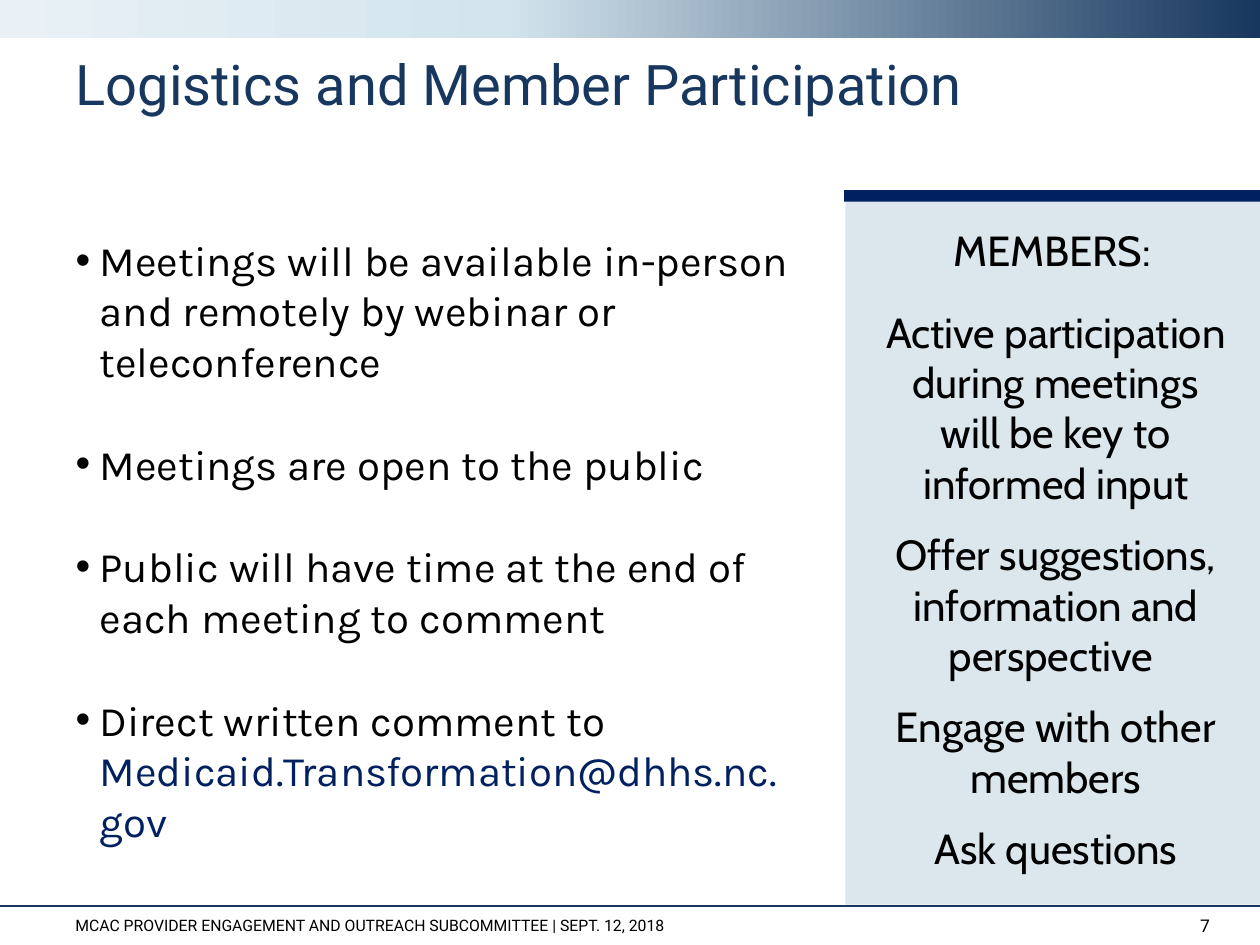
import copy

import pptx
import pptx.dml.color
import pptx.enum.shapes
import pptx.enum.text
import pptx.oxml
import pptx.util

Inches = pptx.util.Inches
Pt = pptx.util.Pt
ALIGN = pptx.enum.text.PP_ALIGN
ANCHOR = pptx.enum.text.MSO_ANCHOR
RECTANGLE = pptx.enum.shapes.MSO_SHAPE.RECTANGLE


def color(value):
    return pptx.dml.color.RGBColor.from_string(value)


def write(paragraph, text, font, paragraph_format):
    paragraph.text = text
    for name, value in paragraph_format.items():
        setattr(paragraph, name, value)
    for run in paragraph.runs:
        run.font.color.rgb = color("000000")
        for name, value in font.items():
            setattr(run.font, name, value)


presentation = pptx.Presentation()
presentation.slide_width = Inches(10)
presentation.slide_height = Inches(7.5)
slide = presentation.slides.add_slide(presentation.slide_layouts[1])

footer_line = slide.shapes.add_connector(
    pptx.enum.shapes.MSO_CONNECTOR.STRAIGHT,
    Inches(0), Inches(7.19), Inches(10), Inches(7.19),
)
footer_line.line.color.rgb = color("17375E")
footer_line.line.width = Pt(1)
footer_line.element.spPr.append(
    pptx.oxml.parse_xml(
        '<a:effectLst xmlns:a="http://schemas.openxmlformats.org/drawingml/2006/main"/>'
    )
)

rectangles = []
for left, top, width, height, fill in [
    (0, 0, 10, 0.3, "17375E"),
    (6.71, 1.56, 3.29, 5.62, "DBE7EC"),
    (6.7, 1.51, 3.3, 0.09, "002060"),
]:
    shape = slide.shapes.add_shape(
        RECTANGLE, Inches(left), Inches(top), Inches(width), Inches(height)
    )
    shape.shadow.inherit = False
    shape.fill.solid()
    shape.fill.fore_color.rgb = color(fill)
    shape.line.fill.background()
    rectangles.append(shape)

top_band = rectangles[0]
top_band.fill.gradient()
top_band.fill.gradient_angle = 180
stop_list = top_band.element.xpath(".//a:gsLst")[0]
stop_list.insert(1, copy.deepcopy(stop_list[0]))
gradient = [(0, "17375E"), (0.6, "D3E4ED"), (1, "E9F1F6")]
for stop, (position, value) in zip(top_band.fill.gradient_stops, gradient):
    stop.position = position
    stop.color.rgb = color(value)

title = slide.shapes.title
body = slide.placeholders[1]
footer, number, members = [
    slide.shapes.add_textbox(0, 0, Inches(1), Inches(1)) for _ in range(3)
]
for shape, left, top, width, height, anchor in [
    (title, 0.5, 0.4, 9, 0.6, ANCHOR.TOP),
    (body, 0.5, 1.81, 5.91, 4.77, ANCHOR.TOP),
    (footer, 0.5, 7.19, 8.47, 0.31, ANCHOR.MIDDLE),
    (number, 9.08, 7.19, 0.62, 0.31, ANCHOR.MIDDLE),
    (members, 6.85, 1.73, 3, 5.3, ANCHOR.TOP),
]:
    shape.left, shape.top = Inches(left), Inches(top)
    shape.width, shape.height = Inches(width), Inches(height)
    shape.text_frame.word_wrap = True
    shape.text_frame.auto_size = pptx.enum.text.MSO_AUTO_SIZE.NONE
    shape.text_frame.vertical_anchor = anchor

for shape, text, font, paragraph_format in [
    (title, "Logistics and Member Participation",
     {"name": "Roboto", "size": Pt(32)},
     {"alignment": ALIGN.LEFT, "line_spacing": 0.9}),
    (footer, "MCAC PROVIDER ENGAGEMENT AND OUTREACH SUBCOMMITTEE | SEPT. 12, 2018",
     {"name": "Roboto", "size": Pt(9)}, {}),
    (number, "7", {"name": "Roboto", "size": Pt(10)}, {"alignment": ALIGN.RIGHT}),
]:
    write(shape.text_frame.paragraphs[0], text, font, paragraph_format)
title.text_frame.paragraphs[0].runs[0].font.color.rgb = color("17375E")

body_font = {"name": "Karla", "size": Pt(24)}
for index, (text, space_after) in enumerate([
    ("Meetings will be available in-person and remotely by webinar or teleconference", 18),
    ("Meetings are open to the public", 18),
    ("Public will have time at the end of each meeting to comment", 18),
    ("Direct written comment to ", 6),
]):
    frame = body.text_frame
    paragraph = frame.add_paragraph() if index else frame.paragraphs[0]
    write(paragraph, text, body_font,
          {"space_before": Pt(12), "space_after": Pt(space_after)})
    properties = paragraph._p.get_or_add_pPr()
    properties.set("marL", str(Inches(0.19)))
    properties.set("indent", str(-Inches(0.19)))

address = paragraph.add_run()
address.text = "Medicaid.Transformation@dhhs.nc.gov"
for name, value in body_font.items():
    setattr(address.font, name, value)
address.font.color.rgb = color("002060")

for index, (text, space_before, space_after, margin) in enumerate([
    ("MEMBERS:", 12, 18, 0),
    ("Active participation during meetings\vwill be key to\vinformed input", 0, 12, 0.06),
    ("Offer suggestions, information and perspective ", 0, 12, 0.06),
    ("Engage with other members", 0, 12, 0.06),
    ("Ask questions", 0, 12, 0.06),
]):
    frame = members.text_frame
    paragraph = frame.add_paragraph() if index else frame.paragraphs[0]
    write(paragraph, text, {"name": "Cabin", "size": Pt(24)},
          {"alignment": ALIGN.CENTER, "space_before": Pt(space_before),
           "space_after": Pt(space_after)})
    paragraph._p.get_or_add_pPr().set("marL", str(Inches(margin)))

presentation.save("out.pptx")
